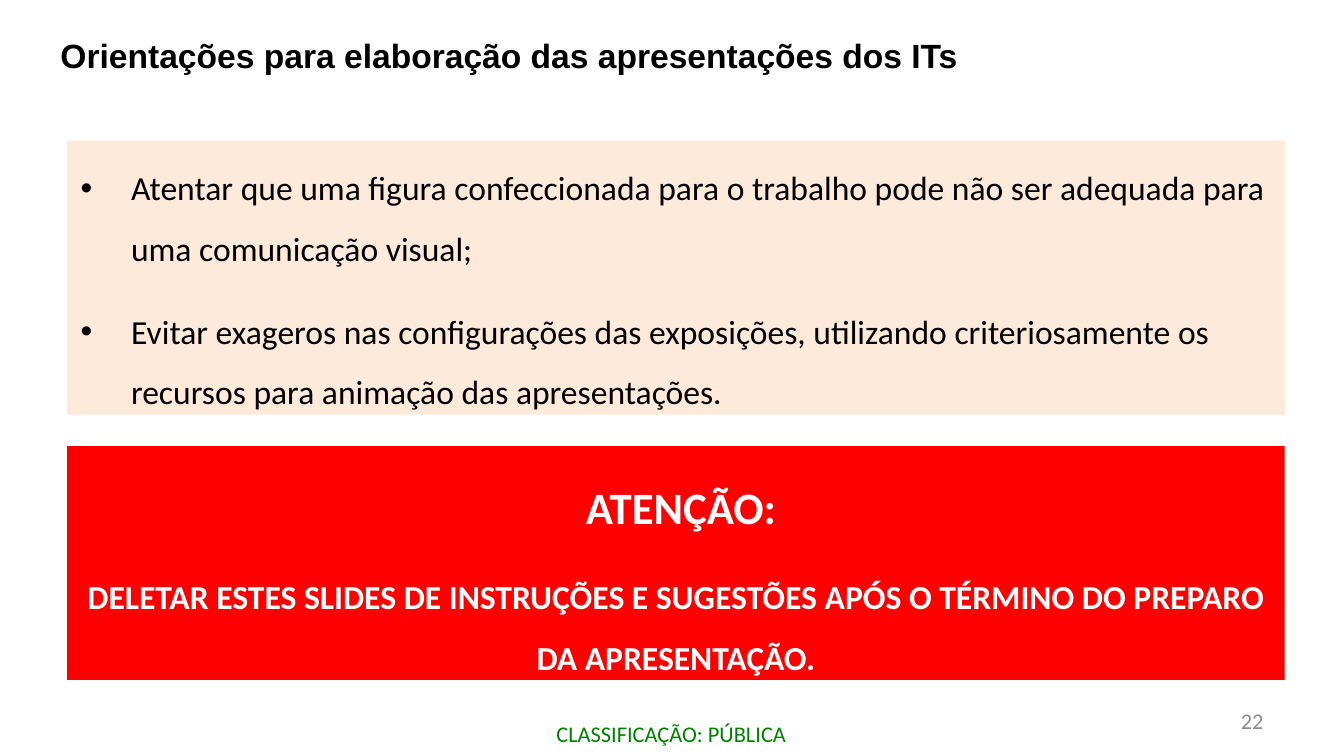
from pptx import Presentation
from pptx.dml.color import RGBColor
from pptx.enum.shapes import MSO_SHAPE
from pptx.enum.text import MSO_ANCHOR as Anchor, MSO_AUTO_SIZE as AutoSize, PP_ALIGN as Align
from pptx.oxml.ns import qn
from pptx.util import Inches, Pt
from lxml.etree import SubElement

CELL = Inches(0.1)
COLUMNS, ROWS = 100, 56.25
PANEL_LEFT, PANEL_WIDTH = 5, 90.6


def color(value):
    """Return the colour for a hex string."""
    return RGBColor.from_string(value)


def place(shape, box):
    """Move a shape to a box given in grid columns and rows."""
    shape.left, shape.top, shape.width, shape.height = (round(n * CELL) for n in box)


def prepare_frame(shape, anchor=Anchor.TOP, margins=(0.1, 0.05), wrap=True):
    """Set anchoring, wrapping and margins of a shape's text and return its frame."""
    frame = shape.text_frame
    frame.auto_size = AutoSize.NONE
    frame.word_wrap = wrap
    frame.vertical_anchor = anchor
    frame.margin_left = frame.margin_right = Inches(margins[0])
    frame.margin_top = frame.margin_bottom = Inches(margins[1])
    return frame


def add_run(paragraph, text, size, hex_color, font="Calibri", bold=False):
    """Add one formatted run to a paragraph."""
    run = paragraph.add_run()
    run.text = text
    run.font.name, run.font.size, run.font.bold = font, Pt(size), bold
    run.font.color.rgb = color(hex_color)


def add_spaced_paragraph(frame, index, alignment):
    """Return the paragraph at an index, with wide lines and gaps between paragraphs."""
    paragraph = frame.add_paragraph() if index else frame.paragraphs[0]
    paragraph.alignment = alignment
    paragraph.line_spacing = 1.5
    paragraph.space_before = Pt(6 if index else 0)
    paragraph.space_after = Pt(6)
    return paragraph


def add_bullet(paragraph, indent):
    """Give a paragraph a round bullet with a hanging indent."""
    properties = paragraph._p.get_or_add_pPr()
    properties.set("marL", str(indent))
    properties.set("indent", str(-indent))
    SubElement(properties, qn("a:buFont"), typeface="Arial")
    SubElement(properties, qn("a:buChar"), char="•")


def fill_title(shape, box, text):
    """Place the slide title."""
    place(shape, box)
    paragraph = prepare_frame(shape).paragraphs[0]
    paragraph.alignment = Align.LEFT
    add_run(paragraph, text, 18, "000000", font="Arial", bold=True)


def fill_guidelines(shape, box, items):
    """Place the bulleted guidelines on their pale panel."""
    place(shape, box)
    shape.fill.solid()
    shape.fill.fore_color.rgb = color("FDEADA")
    frame = prepare_frame(shape)
    for index, item in enumerate(items):
        paragraph = add_spaced_paragraph(frame, index, Align.LEFT)
        add_bullet(paragraph, Inches(0.375))
        add_run(paragraph, item, 18, "000000")


def add_warning(slide, box, lines):
    """Add the red warning panel with its centred lines of text and size."""
    shape = slide.shapes.add_shape(MSO_SHAPE.RECTANGLE, 0, 0, 0, 0)
    place(shape, box)
    shape.shadow.inherit = False
    shape.fill.solid()
    shape.fill.fore_color.rgb = color("FF0000")
    shape.line.fill.background()
    frame = prepare_frame(shape)
    for index, (text, size) in enumerate(lines):
        paragraph = add_spaced_paragraph(frame, index, Align.CENTER)
        add_run(paragraph, text, size, "FFFFFF", bold=True)


def add_footer_text(slide, box, text, hex_color, alignment, **frame_options):
    """Add one small line of text at the foot of the slide."""
    shape = slide.shapes.add_textbox(0, 0, 0, 0)
    place(shape, box)
    paragraph = prepare_frame(shape, **frame_options).paragraphs[0]
    paragraph.alignment = alignment
    add_run(paragraph, text, 12, hex_color)


def main():
    """Build the slide and save it."""
    presentation = Presentation()
    presentation.slide_width = round(COLUMNS * CELL)
    presentation.slide_height = round(ROWS * CELL)
    slide = presentation.slides.add_slide(presentation.slide_layouts[1])
    title, body = slide.placeholders
    fill_title(title, (3.5, 2.1, 74, 4),
               "Orientações para elaboração das apresentações dos ITs")
    fill_guidelines(body, (PANEL_LEFT, 10.45, PANEL_WIDTH, 20.4), [
        "Atentar que uma figura confeccionada para o trabalho pode não ser "
        "adequada para uma comunicação visual;",
        "Evitar exageros nas configurações das exposições, utilizando "
        "criteriosamente os recursos para animação das apresentações.",
    ])
    add_warning(slide, (PANEL_LEFT, 33.2, PANEL_WIDTH, 17.4), [
        (" ATENÇÃO:", 24),
        ("DELETAR ESTES SLIDES DE INSTRUÇÕES E SUGESTÕES APÓS O TÉRMINO DO "
         "PREPARO DA APRESENTAÇÃO.", 18),
    ])
    add_footer_text(slide, (41.4, 53.55, 17.5, 2), "CLASSIFICAÇÃO: PÚBLICA",
                    "008000", Align.LEFT, margins=(0, 0), wrap=False)
    add_footer_text(slide, (71.7, 52.15, 23.3, 3), "22", "8C8C8C", Align.RIGHT,
                    anchor=Anchor.MIDDLE)
    presentation.save("out.pptx")


if __name__ == "__main__":
    main()
